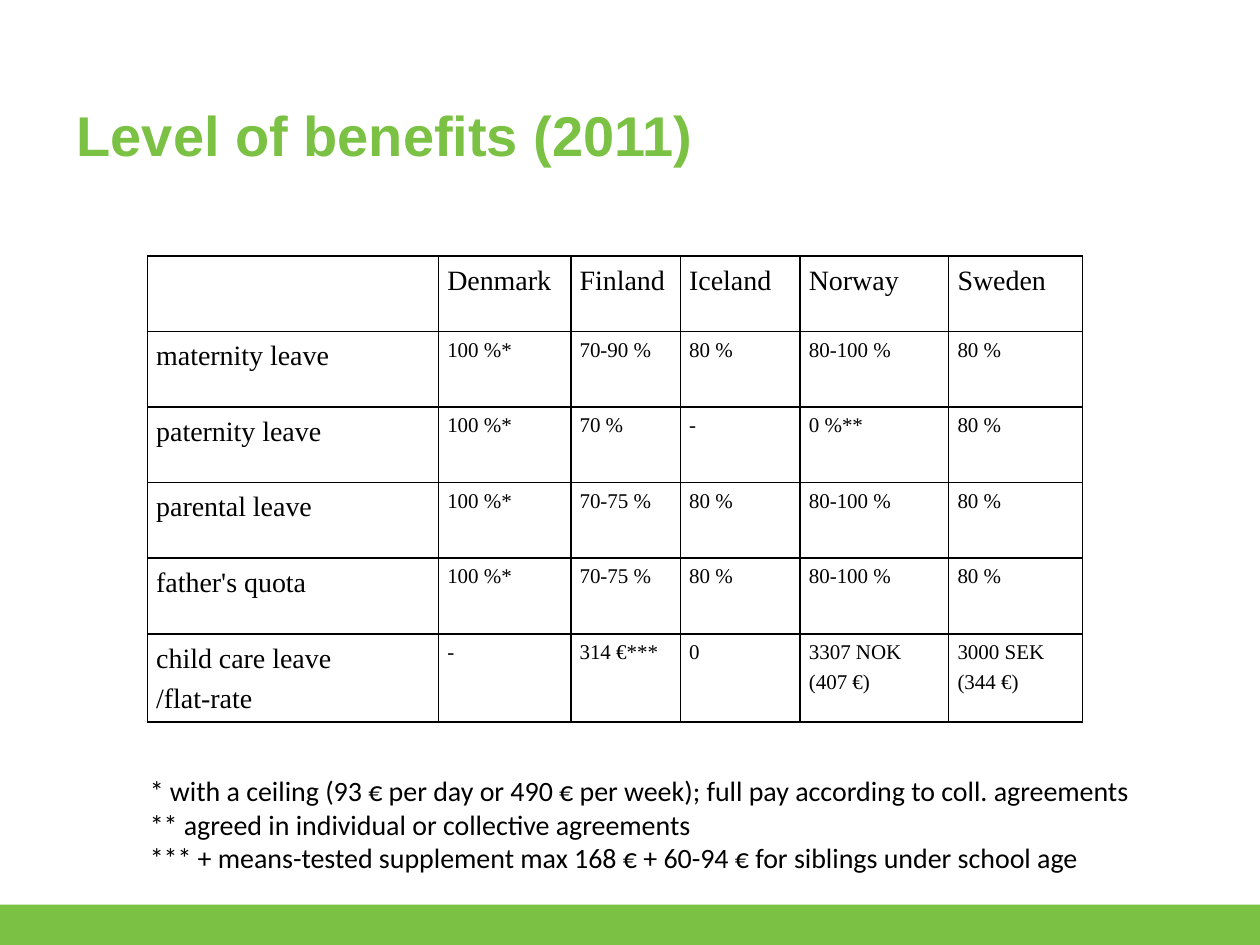
from lxml import etree
from pptx import Presentation
from pptx.dml.color import RGBColor
from pptx.enum.shapes import MSO_SHAPE
from pptx.enum.text import MSO_ANCHOR, PP_ALIGN
from pptx.oxml.ns import qn
from pptx.util import Pt

RECT = MSO_SHAPE.RECTANGLE
TOP, LOW = MSO_ANCHOR.TOP, MSO_ANCHOR.BOTTOM
LEFT = PP_ALIGN.LEFT
PX = 9144  # 100 px to the inch
COLORS = {"green": "7BC143", "black": "000000"}
SERIF = "Times New Roman"

COLS = [231, 105, 87, 95, 118, 106]
ROWS = [60] * 5 + [70]
BENEFITS = [
    ["", "Denmark", "Finland", "Iceland", "Norway", "Sweden"],
    ["maternity leave", "100 %*", "70-90 %", "80 %", "80-100 %", "80 %"],
    ["paternity leave", "100 %*", "70 %", "-", "0 %**", "80 %"],
    ["parental leave", "100 %*", "70-75 %", "80 %", "80-100 %", "80 %"],
    ["father's quota", "100 %*", "70-75 %", "80 %", "80-100 %", "80 %"],
    ["child care leave\n/flat-rate", "-", "314 €***", "0",
     "3307 NOK\n(407 €)", "3000 SEK\n(344 €)"],
]
NOTES = (
    "* with a ceiling (93 € per day or 490 € per week); "
    "full pay according to coll. agreements\n"
    "** agreed in individual or collective agreements\n"
    "*** + means-tested supplement max 168 € + 60-94 € "
    "for siblings under school age"
)


def color(name):
    return RGBColor.from_string(COLORS[name])


def write(frame, text, size=16, font=SERIF, tint="black", bold=False, gap=1.0):
    """Fill a text frame, one paragraph for each line of text."""
    frame.word_wrap = True
    frame.text = text
    for para in frame.paragraphs:
        para.alignment = LEFT
        para.line_spacing = gap
        para.font.size = Pt(size)
        para.font.name = font
        para.font.bold = bold
        para.font.color.rgb = color(tint)


def border(cell, tint="black", width=1):
    """Draw a line on all four sides of a table cell."""
    props = cell._tc.get_or_add_tcPr()
    for spot, side in enumerate(("a:lnL", "a:lnR", "a:lnT", "a:lnB")):
        line = etree.Element(qn(side), w=str(Pt(width)))
        fill = etree.SubElement(line, qn("a:solidFill"))
        etree.SubElement(fill, qn("a:srgbClr"), val=COLORS[tint])
        props.insert(spot, line)


class Deck:
    def __init__(self, wide, high):
        self.show = Presentation()
        self.show.slide_width = wide * PX
        self.show.slide_height = high * PX
        self.slide = self.show.slides.add_slide(self.show.slide_layouts[6])

    def bar(self, x, y, w, h, tint):
        shape = self.slide.shapes.add_shape(RECT, x * PX, y * PX, w * PX, h * PX)
        shape.shadow.inherit = False
        shape.fill.solid()
        shape.fill.fore_color.rgb = color(tint)
        shape.line.fill.background()

    def text(self, x, y, w, h, words, anchor=TOP, **style):
        box = self.slide.shapes.add_textbox(x * PX, y * PX, w * PX, h * PX)
        box.text_frame.vertical_anchor = anchor
        write(box.text_frame, words, **style)

    def table(self, x, y, cols, rows, data):
        frame = self.slide.shapes.add_table(
            len(rows), len(cols), x * PX, y * PX, sum(cols) * PX, sum(rows) * PX)
        grid = frame.table
        grid.first_row = grid.horz_banding = False
        for col, wide in zip(grid.columns, cols):
            col.width = wide * PX
        for r, (high, line) in enumerate(zip(rows, data)):
            grid.rows[r].height = high * PX
            for c, words in enumerate(line):
                cell = grid.cell(r, c)
                cell.margin_left = cell.margin_right = 7 * PX
                cell.margin_top = cell.margin_bottom = 0
                cell.fill.background()
                border(cell)
                size = 12 if r and c else 16
                write(cell.text_frame, words, size=size, gap=1.3)

    def save(self):
        self.show.save("out.pptx")


def main():
    deck = Deck(1000, 750)
    deck.bar(0, 718, 1000, 32, "green")
    deck.text(51, 28, 898, 110, "Level of benefits (2011)", anchor=LOW,
              size=32, font="Arial", tint="green", bold=True, gap=0.85)
    deck.table(117, 203, COLS, ROWS, BENEFITS)
    deck.text(109, 609, 859, 91, NOTES, font="Calibri")
    deck.save()


if __name__ == "__main__":
    main()
